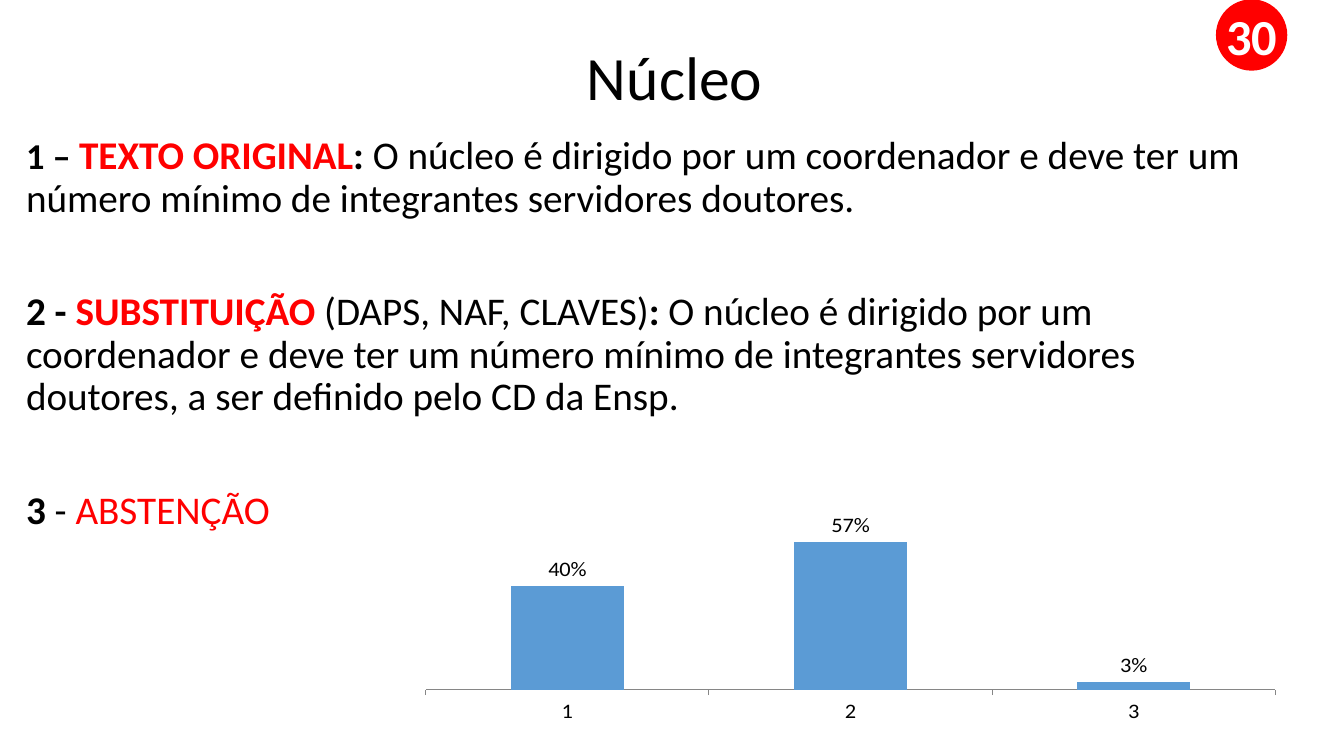
from pptx import Presentation
from pptx import util as u
from pptx.chart.data import CategoryChartData
from pptx.dml.color import RGBColor
from pptx.enum import chart as ch, shapes, text

BLACK = RGBColor(0x00, 0x00, 0x00)
WHITE = RGBColor(0xFF, 0xFF, 0xFF)
RED = RGBColor(0xFF, 0x00, 0x00)
BLUE = RGBColor(0x5B, 0x9B, 0xD5)
GRAY = RGBColor(0x86, 0x86, 0x86)
COLS, ROWS = 96, 54


def add_run(p, words, size=28, color=BLACK, bold=False, font="Calibri"):
    r = p.add_run()
    r.text = words
    r.font.name = font
    r.font.size = u.Pt(size)
    r.font.bold = bold
    r.font.color.rgb = color


class VoteSlide:
    """A title-only slide measured on a grid of COLS by ROWS square cells."""

    def __init__(self, prs):
        self.cell_w = prs.slide_width / COLS
        self.cell_h = prs.slide_height / ROWS
        self.s = prs.slides.add_slide(prs.slide_layouts[5])

    def box(self, col, row, cols, rows):
        return (u.Emu(round(col * self.cell_w)), u.Emu(round(row * self.cell_h)),
                u.Emu(round(cols * self.cell_w)), u.Emu(round(rows * self.cell_h)))

    def title(self, words, *cells):
        sp = self.s.shapes.title
        sp.left, sp.top, sp.width, sp.height = self.box(*cells)
        tf = sp.text_frame
        tf.auto_size = text.MSO_AUTO_SIZE.NONE
        tf.vertical_anchor = text.MSO_ANCHOR.MIDDLE
        p = tf.paragraphs[0]
        p.alignment = text.PP_ALIGN.CENTER
        p.line_spacing = 0.9
        add_run(p, words, size=44)

    def options(self, paragraphs, *cells):
        """Each paragraph is a list of (words, run format) pairs."""
        tf = self.s.shapes.add_textbox(*self.box(*cells)).text_frame
        tf.word_wrap = True
        for i, runs in enumerate(paragraphs):
            p = tf.add_paragraph() if i else tf.paragraphs[0]
            p.line_spacing = 0.9
            p.space_before = u.Pt(51 if i else 0)
            for words, fmt in runs:
                add_run(p, words, **fmt)

    def votes(self, shares, *cells):
        data = CategoryChartData(number_format="0%")
        data.categories = list(shares)
        data.add_series("Series 1", list(shares.values()))
        chart = self.s.shapes.add_chart(
            ch.XL_CHART_TYPE.COLUMN_CLUSTERED, *self.box(*cells), data).chart
        chart.has_legend = chart.has_title = False
        chart.font.name = "Calibri"
        chart.font.size = u.Pt(16)
        chart.font.color.rgb = BLACK

        values = chart.value_axis
        values.visible = values.has_major_gridlines = False
        values.minimum_scale, values.maximum_scale = 0, 0.6
        chart.category_axis.major_tick_mark = ch.XL_TICK_MARK.OUTSIDE
        chart.category_axis.format.line.color.rgb = GRAY

        plot = chart.plots[0]
        plot.gap_width = 150
        plot.vary_by_categories = False
        fill = plot.series[0].format.fill
        fill.solid()
        fill.fore_color.rgb = BLUE
        plot.has_data_labels = True
        labels = plot.data_labels
        labels.show_value = True
        labels.number_format = "0%"
        labels.number_format_is_linked = False
        labels.position = ch.XL_LABEL_POSITION.OUTSIDE_END

    def badge(self, number, *cells):
        sp = self.s.shapes.add_shape(shapes.MSO_SHAPE.OVAL, *self.box(*cells))
        sp.shadow.inherit = False
        sp.fill.solid()
        sp.fill.fore_color.rgb = RED
        sp.line.color.rgb = RED
        sp.line.width = u.Pt(1)
        tf = sp.text_frame
        tf.word_wrap = False
        tf.vertical_anchor = text.MSO_ANCHOR.MIDDLE
        tf.margin_left = tf.margin_right = tf.margin_top = tf.margin_bottom = 0
        p = tf.paragraphs[0]
        p.alignment = text.PP_ALIGN.CENTER
        add_run(p, number, size=36, color=WHITE, bold=True)


def main():
    prs = Presentation()
    prs.slide_width, prs.slide_height = u.Inches(13.33), u.Inches(7.5)
    slide = VoteSlide(prs)
    plain, bold = {}, {"bold": True}
    red, bold_red = {"color": RED}, {"color": RED, "bold": True}
    rule = ("O núcleo é dirigido por um coordenador e deve ter um número mínimo "
            "de integrantes servidores doutores")

    slide.title("Núcleo", 7, -1.75, 82.4, 15)
    slide.options([
        [("1 – ", {"size": 26, "bold": True}), ("TEXTO ORIGINAL", bold_red),
         (": ", bold), (rule + ".", plain)],
        [("2 - ", bold), ("SUBSTITUIÇÃO", bold_red),
         (" (DAPS, NAF, CLAVES)", plain), (": ", bold),
         (rule + ", a ser definido pelo CD da Ensp.", plain)],
        [("3", bold), (" - ", plain), ("ABSTENÇÃO", red)],
    ], 1.15, 9.35, 88.3, 35.35)
    slide.votes({"1": 0.4, "2": 0.57, "3": 0.03}, 29.15, 36.65, 63.2, 15.35)
    slide.badge("30", 86.9, 0, 5, 5)
    prs.save("out.pptx")


if __name__ == "__main__":
    main()
